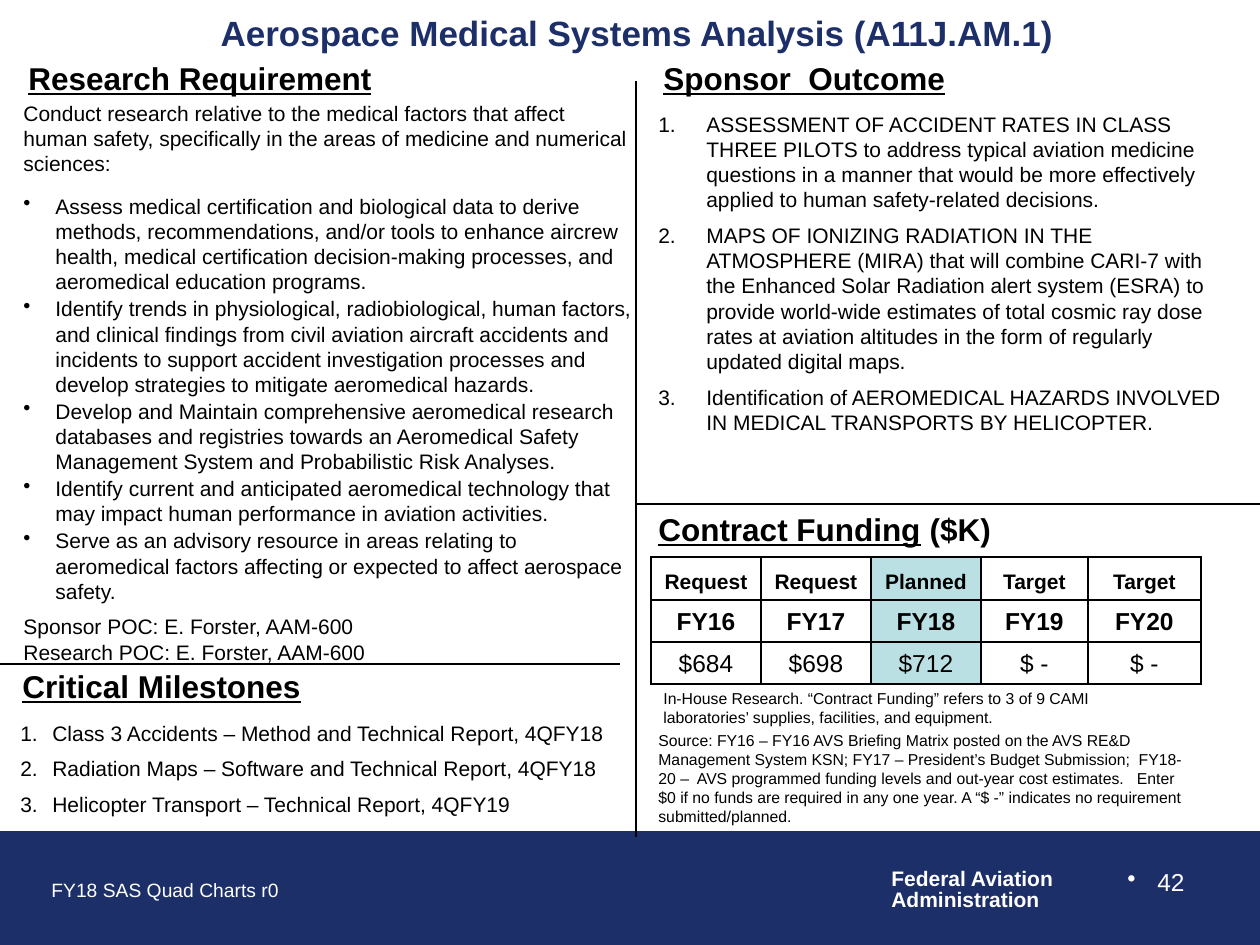
from dataclasses import dataclass

from lxml import etree
from pptx import Presentation
from pptx.dml.color import RGBColor
from pptx.enum.shapes import MSO_CONNECTOR, MSO_SHAPE
from pptx.enum.text import MSO_ANCHOR, PP_ALIGN
from pptx.oxml.ns import qn
from pptx.util import Emu, Pt

PX = 914400 // 126
LEFT, CENTER, RIGHT = PP_ALIGN.LEFT, PP_ALIGN.CENTER, PP_ALIGN.RIGHT
TOP, MIDDLE, BOTTOM = MSO_ANCHOR.TOP, MSO_ANCHOR.MIDDLE, MSO_ANCHOR.BOTTOM
RECTANGLE, STRAIGHT = MSO_SHAPE.RECTANGLE, MSO_CONNECTOR.STRAIGHT


@dataclass(frozen=True)
class Theme:
    font: str = "Arial"
    navy: str = "1D2F68"
    black: str = "000000"
    white: str = "FFFFFF"
    highlight: str = "BBE0E3"
    title: int = 20
    heading: int = 18
    figure: int = 14
    body: int = 12
    footer: int = 11
    note: int = 9
    rule: float = 0.75
    border: int = 1


THEME = Theme()


def px(value):
    return Emu(value * PX)


def rgb(value):
    return RGBColor.from_string(value)


def format_font(font, size, color, bold=False, underline=False):
    font.name, font.size, font.bold = THEME.font, Pt(size), bold
    font.underline = underline
    font.color.rgb = rgb(color)


def set_marker(paragraph, marker, indent):
    """Hanging indent with a bullet character, or numbers for "1."."""
    properties = paragraph._p.get_or_add_pPr()
    properties.set("marL", str(px(indent)))
    properties.set("indent", str(-px(indent)))
    if marker == "1.":
        etree.SubElement(properties, qn("a:buAutoNum"), type="arabicPeriod")
    else:
        etree.SubElement(properties, qn("a:buChar"), char=marker)


def add_text(slide, box, paragraphs, size=THEME.body, color=THEME.black, bold=False,
             underline=False, align=LEFT, anchor=TOP, marker=None, indent=32,
             gap=0, spacing=None):
    """Each paragraph is a string, or a (text, overrides) pair."""
    shape = slide.shapes.add_textbox(*map(px, box))
    frame = shape.text_frame
    frame.word_wrap = True
    frame.vertical_anchor = anchor
    for index, entry in enumerate(paragraphs):
        text, own = (entry, {}) if isinstance(entry, str) else entry
        paragraph = frame.paragraphs[0] if index == 0 else frame.add_paragraph()
        paragraph.alignment = align
        paragraph.line_spacing = spacing
        paragraph.space_before = Pt(own.get("gap", gap) if index else 0)
        if own.get("marker", marker):
            set_marker(paragraph, own.get("marker", marker), indent)
        run = paragraph.add_run()
        run.text = text
        format_font(run.font, size, color, bold, underline)
    return shape


def add_heading(slide, box, text, suffix=""):
    shape = add_text(slide, box, [text], THEME.heading, bold=True, underline=True)
    if suffix:
        run = shape.text_frame.paragraphs[0].add_run()
        run.text = suffix
        format_font(run.font, THEME.heading, THEME.black, bold=True)


def add_rule(slide, x1, y1, x2, y2):
    line = slide.shapes.add_connector(STRAIGHT, px(x1), px(y1), px(x2), px(y2))
    line.line.color.rgb = rgb(THEME.black)
    line.line.width = Pt(THEME.rule)
    etree.SubElement(line._element.spPr, qn("a:effectLst"))


def set_borders(cell):
    properties = cell._tc.get_or_add_tcPr()
    for position, side in enumerate(("lnL", "lnR", "lnT", "lnB")):
        line = etree.Element(qn(f"a:{side}"), w=str(Pt(THEME.border)))
        fill = etree.SubElement(line, qn("a:solidFill"))
        etree.SubElement(fill, qn("a:srgbClr"), val=THEME.black)
        properties.insert(position, line)


def add_funding_table(slide, x, y):
    rows = [
        ("Request", "Request", "Planned", "Target", "Target"),
        ("FY16", "FY17", "FY18", "FY19", "FY20"),
        ("$684", "$698", "$712", "$ -", "$ -"),
    ]
    formats = [(THEME.body, True), (THEME.figure, True), (THEME.figure, False)]
    widths, heights = (110, 110, 110, 107, 113), (43, 42, 42)
    table = slide.shapes.add_table(len(rows), len(widths), px(x), px(y),
                                   px(sum(widths)), px(sum(heights))).table
    for column, width in zip(table.columns, widths):
        column.width = px(width)
    for r, (values, (size, bold)) in enumerate(zip(rows, formats)):
        table.rows[r].height = px(heights[r])
        for c, value in enumerate(values):
            cell = table.cell(r, c)
            cell.fill.solid()
            planned = rows[0][c] == "Planned"
            cell.fill.fore_color.rgb = rgb(THEME.highlight if planned else THEME.white)
            cell.vertical_anchor = BOTTOM
            paragraph = cell.text_frame.paragraphs[0]
            paragraph.alignment = CENTER
            run = paragraph.add_run()
            run.text = value
            format_font(run.font, size, THEME.black, bold)
            set_borders(cell)


def add_requirement(slide, x, y, width):
    add_heading(slide, (x + 16, y, 551, 42), "Research Requirement")
    bullet = {"marker": "•"}
    add_text(slide, (x + 11, y + 41, width, 611), [
        "Conduct research relative to the medical factors that affect human safety, specifically in the areas of medicine and numerical sciences:",
        ("Assess medical certification and biological data to derive methods, recommendations, and/or tools to enhance aircrew health, medical certification decision-making processes, and aeromedical education programs.", {**bullet, "gap": 10}),
        ("Identify trends in physiological, radiobiological, human factors, and clinical findings from civil aviation aircraft accidents and incidents to support accident investigation processes and develop strategies to mitigate aeromedical hazards.", bullet),
        ("Develop and Maintain comprehensive aeromedical research databases and registries towards an Aeromedical Safety Management System and Probabilistic Risk Analyses.", bullet),
        ("Identify current and anticipated aeromedical technology that may impact human performance in aviation activities.", bullet),
        ("Serve as an advisory resource in areas relating to aeromedical factors affecting or expected to affect aerospace safety.", bullet),
        ("Sponsor POC: E. Forster, AAM-600", {"gap": 6}),
        ("Research POC: E. Forster, AAM-600", {"gap": 0}),
    ], gap=1)


def add_milestones(slide, x, y, width):
    add_heading(slide, (x + 10, y, 567, 48), "Critical Milestones")
    add_text(slide, (x + 8, y + 53, width, 115), [
        "Class 3 Accidents – Method and Technical Report, 4QFY18",
        "Radiation Maps – Software and Technical Report, 4QFY18",
        "Helicopter Transport – Technical Report, 4QFY19",
    ], marker="1.", gap=6)


def add_outcome(slide, x, y, width):
    add_heading(slide, (x + 15, y, 588, 42), "Sponsor  Outcome")
    add_text(slide, (x + 10, y + 52, width, 344), [
        "ASSESSMENT OF ACCIDENT RATES IN CLASS THREE PILOTS to address typical aviation medicine questions in a manner that would be more effectively applied to human safety-related decisions.",
        "MAPS OF IONIZING RADIATION IN THE ATMOSPHERE (MIRA) that will combine CARI-7 with the Enhanced Solar Radiation alert system (ESRA) to provide world-wide estimates of total cosmic ray dose rates at aviation altitudes in the form of regularly updated digital maps.",
        "Identification of AEROMEDICAL HAZARDS INVOLVED IN MEDICAL TRANSPORTS BY HELICOPTER.",
    ], marker="1.", indent=48, gap=6)


def add_funding(slide, x, y, width):
    add_heading(slide, (x + 10, y, width, 59), "Contract Funding", " ($K)")
    add_funding_table(slide, x + 15, y + 53)
    add_text(slide, (x + 15, y + 179, 536, 50), [
        "In-House Research. “Contract Funding” refers to 3 of 9 CAMI laboratories’ supplies, facilities, and equipment.",
    ], THEME.note)
    add_text(slide, (x + 10, y + 221, width, 137), [
        "Source: FY16 – FY16 AVS Briefing Matrix posted on the AVS RE&D Management System KSN; FY17 – President’s Budget Submission;  FY18-20 –  AVS programmed funding levels and out-year cost estimates.   Enter $0 if no funds are required in any one year. A “$ -” indicates no requirement submitted/planned.",
    ], THEME.note)


def add_footer(slide, x, y, width, height):
    band = slide.shapes.add_shape(RECTANGLE, *map(px, (x, y, width, height)))
    band.shadow.inherit = False
    band.fill.solid()
    band.fill.fore_color.rgb = band.line.color.rgb = rgb(THEME.navy)
    band.line.width = Pt(THEME.rule)
    add_text(slide, (x + 39, y + 40, 260, 37), ["FY18 SAS Quad Charts r0"],
             THEME.footer, THEME.white)
    add_text(slide, (x + 879, y + 31, 195, 55), ["Federal Aviation", "Administration"],
             color=THEME.white, bold=True, spacing=0.85)
    add_text(slide, (x + 903, y + 29, 294, 66), ["42"], THEME.figure, THEME.white,
             align=RIGHT, marker="•", indent=30)


def main():
    presentation = Presentation()
    presentation.slide_width, presentation.slide_height = px(1260), px(945)
    slide = presentation.slides.add_slide(presentation.slide_layouts[6])
    add_footer(slide, 0, 832, 1260, 112)
    add_text(slide, (53, 10, 1168, 44), ["Aerospace Medical Systems Analysis (A11J.AM.1)"],
             THEME.title, THEME.navy, bold=True, align=CENTER, anchor=MIDDLE)
    # Quadrants
    add_requirement(slide, 0, 53, 635)
    add_milestones(slide, 0, 661, 633)
    add_outcome(slide, 636, 53, 592)
    add_funding(slide, 636, 504, 551)
    # Dividing lines
    add_rule(slide, 636, 81, 636, 837)
    add_rule(slide, 636, 504, 1260, 504)
    add_rule(slide, 0, 664, 620, 664)
    presentation.save("out.pptx")


if __name__ == "__main__":
    main()
